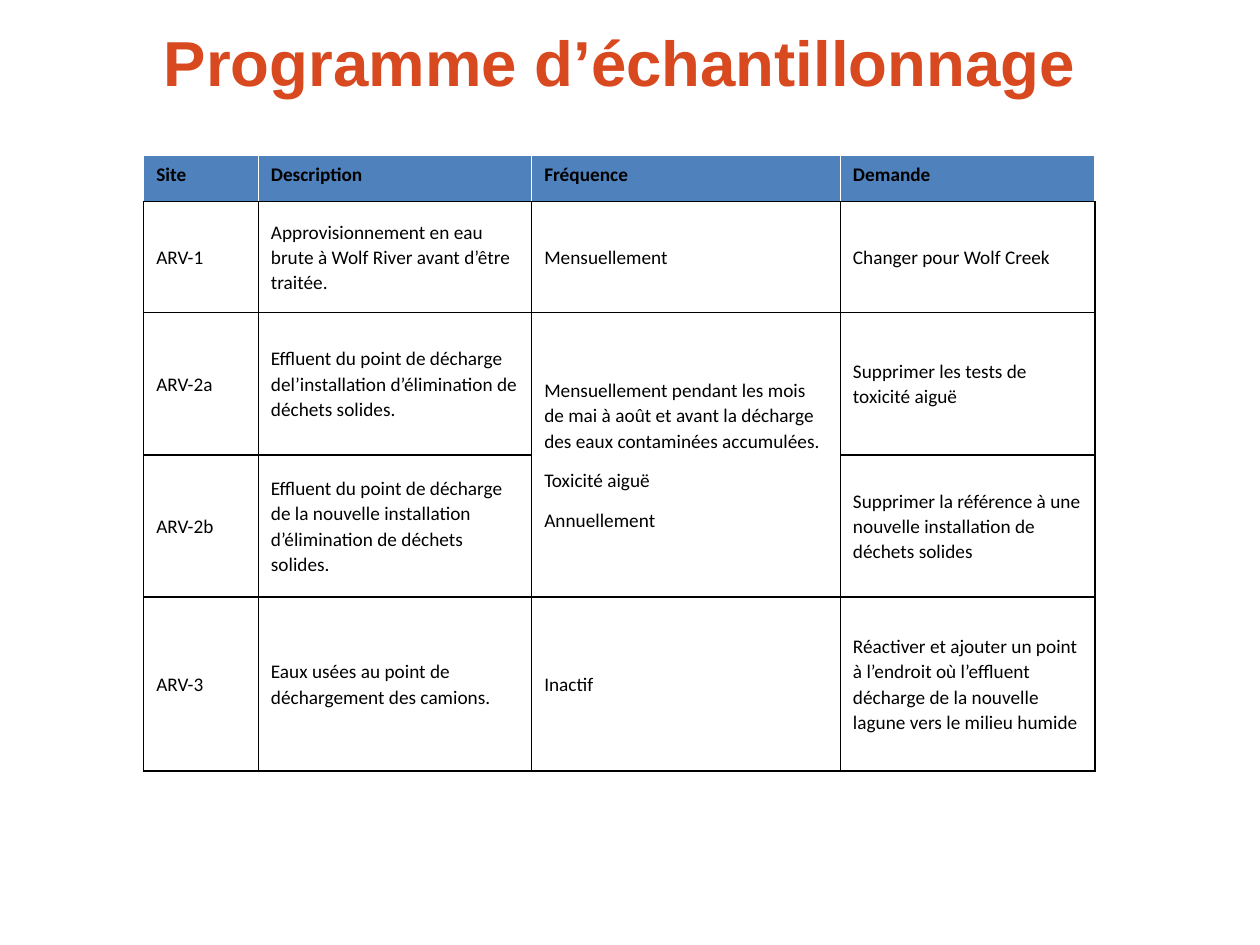
from lxml.etree import SubElement
from pptx import Presentation
from pptx.dml.color import RGBColor
from pptx.enum.text import MSO_ANCHOR, PP_ALIGN
from pptx.oxml.ns import qn
from pptx.util import Inches, Pt

HUES = {"title": "D8491F", "head": "4F81BD", "ink": "000000", "rule": "FFFFFF"}
WIDTHS = [0.91, 2.17, 2.45, 2.02]
HEIGHTS = [0.37, 0.88, 1.13, 1.13, 1.38]
ROWS = [
    ["Site", "Description", "Fréquence", "Demande"],
    ["ARV-1",
     "Approvisionnement en eau brute à Wolf River avant d’être traitée.",
     "Mensuellement",
     "Changer pour Wolf Creek"],
    ["ARV-2a",
     "Effluent du point de décharge del’installation d’élimination de déchets solides.",
     "Mensuellement pendant les mois de mai à août et avant la décharge "
     "des eaux contaminées accumulées.\nToxicité aiguë\nAnnuellement",
     "Supprimer les tests de toxicité aiguë"],
    ["ARV-2b",
     "Effluent du point de décharge de la nouvelle installation "
     "d’élimination de déchets solides.",
     None,
     "Supprimer la référence à une nouvelle installation de déchets solides"],
    ["ARV-3",
     "Eaux usées au point de déchargement des camions.",
     "Inactif",
     "Réactiver et ajouter un point à l’endroit où l’effluent décharge "
     "de la nouvelle lagune vers le milieu humide"],
]


def add_run(para, text, face, size, hue, bold):
    run = para.add_run()
    run.text = text
    run.font.name = face
    run.font.size = Pt(size)
    run.font.bold = bold
    run.font.color.rgb = RGBColor.from_string(HUES[hue])


def add_edge(cell, side, hue):
    line = SubElement(cell._tc.get_or_add_tcPr(), qn(f"a:ln{side}"), w=str(Pt(1)))
    fill = SubElement(line, qn("a:solidFill"))
    SubElement(fill, qn("a:srgbClr"), val=HUES[hue])


deck = Presentation()
deck.slide_width, deck.slide_height = Inches(10), Inches(7.5)
slide = deck.slides.add_slide(deck.slide_layouts[5])

title = slide.shapes.title
title.left, title.top = Inches(1.14), Inches(0.01)
title.width, title.height = Inches(7.56), Inches(0.95)
frame = title.text_frame
frame.word_wrap = True
frame.vertical_anchor = MSO_ANCHOR.MIDDLE
para = frame.paragraphs[0]
para.alignment = PP_ALIGN.CENTER
add_run(para, "Programme d’échantillonnage", "Arial", 36.3, "title", True)

table = slide.shapes.add_table(
    len(ROWS), len(WIDTHS), Inches(1.14), Inches(1.23),
    Inches(sum(WIDTHS)), Inches(sum(HEIGHTS))).table
table.horz_banding = False
for col, width in zip(table.columns, WIDTHS):
    col.width = Inches(width)
for row, height in zip(table.rows, HEIGHTS):
    row.height = Inches(height)
table.cell(2, 2).merge(table.cell(3, 2))

for r, texts in enumerate(ROWS):
    head = r == 0
    for c, text in enumerate(texts):
        cell = table.cell(r, c)
        for side in "LRTB":
            add_edge(cell, side, "rule" if head and side != "B" else "ink")
        if head:
            cell.fill.solid()
            cell.fill.fore_color.rgb = RGBColor.from_string(HUES["head"])
        else:
            cell.fill.background()
        cell.vertical_anchor = MSO_ANCHOR.TOP if head else MSO_ANCHOR.MIDDLE
        if text is None:
            continue
        frame = cell.text_frame
        for i, part in enumerate(text.split("\n")):
            para = frame.add_paragraph() if i else frame.paragraphs[0]
            para.line_spacing = 1.07
            para.space_after = Pt(8)
            add_run(para, part, "Calibri", 11, "ink", head)

deck.save("out.pptx")
